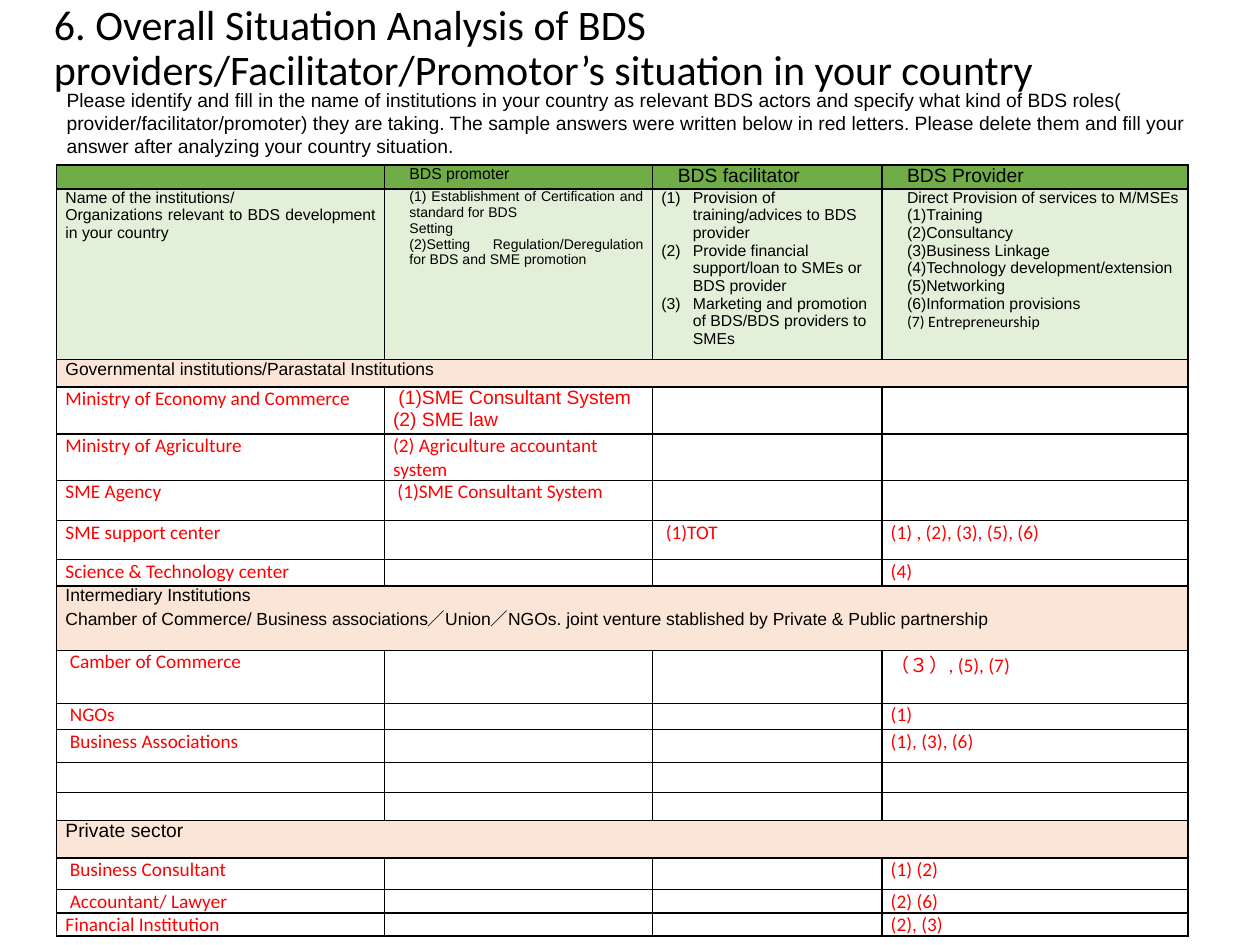
from dataclasses import dataclass

from lxml import etree
from pptx import Presentation
from pptx.dml.color import RGBColor
from pptx.enum.text import MSO_ANCHOR, PP_ALIGN
from pptx.oxml.ns import qn
from pptx.util import Inches, Pt

LEFT, JUST = PP_ALIGN.LEFT, PP_ALIGN.JUSTIFY
TOP, MIDDLE = MSO_ANCHOR.TOP, MSO_ANCHOR.MIDDLE
BLACK, RED = "000000", "FF0000"
GREEN, PALE, PEACH = "70AD47", "E2F0D9", "FBE5D6"
WIDTHS = (2.6, 2.13, 1.82, 2.43)


@dataclass
class Entry:
    text: str = ""
    size: float = 11
    font: str = "Calibri"
    color: str = RED
    align: int = LEFT
    indent: float = 0
    hang: float = 0
    number: bool = False


@dataclass
class Row:
    height: float
    cells: list
    fill: str = ""
    merged: bool = False


def paint(code: str) -> RGBColor:
    return RGBColor.from_string(code)


def head(text: str, size: float) -> Entry:
    return Entry(text, size, "Arial", BLACK, JUST, 0.13)


def answer(height: float, *texts: str) -> Row:
    return Row(height, [Entry(text) for text in texts])


def section(height: float, text: str, size: float) -> Row:
    return Row(height, [Entry(text, size, "Arial", BLACK, JUST)], PEACH, True)


def write(frame, entry: Entry) -> None:
    frame.word_wrap = True
    frame.text = entry.text
    for para in frame.paragraphs:
        para.alignment = entry.align
        props = para._p.get_or_add_pPr()
        if entry.indent:
            props.set("marL", str(Inches(entry.indent)))
            props.set("indent", str(Inches(-entry.hang)))
        if entry.number:
            etree.SubElement(props, qn("a:buAutoNum"), type="arabicParenBoth")
        for run in para.runs:
            run.font.size = Pt(entry.size)
            run.font.name = entry.font
            run.font.color.rgb = paint(entry.color)
        if not para.runs:
            para._p.get_or_add_endParaRPr().set("sz", "800")


def border(cell) -> None:
    props = cell._tc.get_or_add_tcPr()
    for side in ("lnL", "lnR", "lnT", "lnB"):
        line = etree.SubElement(props, qn(f"a:{side}"), w=str(Pt(1)))
        solid = etree.SubElement(line, qn("a:solidFill"))
        etree.SubElement(solid, qn("a:srgbClr"), val=BLACK)


def add_text(slide, box: tuple, entry: Entry, anchor: int):
    frame = slide.shapes.add_textbox(*map(Inches, box)).text_frame
    write(frame, entry)
    frame.vertical_anchor = anchor
    return frame


def add_grid(slide, rows: list):
    high = sum(row.height for row in rows)
    box = map(Inches, (0.45, 1.31, sum(WIDTHS), high))
    table = slide.shapes.add_table(len(rows), len(WIDTHS), *box).table
    table.first_row = table.horz_banding = False
    for col, width in zip(table.columns, WIDTHS):
        col.width = Inches(width)
    for r, row in enumerate(rows):
        table.rows[r].height = Inches(row.height)
        for c in range(len(WIDTHS)):
            cell = table.cell(r, c)
            cell.margin_left = cell.margin_right = Inches(0.07)
            cell.margin_top = cell.margin_bottom = 0
            border(cell)
            if row.fill:
                cell.fill.solid()
                cell.fill.fore_color.rgb = paint(row.fill)
            else:
                cell.fill.background()
            write(cell.text_frame, row.cells[c] if c < len(row.cells) else Entry())
        if row.merged:
            table.cell(r, 0).merge(table.cell(r, len(WIDTHS) - 1))
    return table


TITLE = "6. Overall Situation Analysis of BDS providers/Facilitator/Promotor’s situation in your country"
GUIDE = (
    "Please identify and fill in the name of institutions in your country as relevant BDS actors "
    "and specify what kind of BDS roles( provider/facilitator/promoter) they are taking. "
    "The sample answers were written below in red letters. "
    "Please delete them and fill your answer after analyzing your country situation."
)
NAMES = "Name of the institutions/\nOrganizations relevant to BDS development in your country"
PROMOTE = (
    "(1) Establishment of Certification and standard for BDS\nSetting\n"
    "(2)Setting Regulation/Deregulation for BDS and SME promotion"
)
ASSIST = (
    "Provision of training/advices to BDS provider\n"
    "Provide financial support/loan to SMEs or BDS provider\n"
    "Marketing and promotion of BDS/BDS providers to SMEs"
)
PROVIDE = (
    "Direct Provision of services to M/MSEs\n(1)Training\n(2)Consultancy\n"
    "(3)Business Linkage\n(4)Technology development/extension\n(5)Networking\n"
    "(6)Information provisions\n(7) Entrepreneurship"
)
MIDDLEMEN = (
    "Intermediary Institutions\nChamber of Commerce/ Business associations／Union／NGOs. "
    "joint venture stablished by Private & Public partnership"
)
ROWS = [
    Row(0.19, [Entry(), head("BDS promoter", 9), head("BDS facilitator ", 11),
               head("BDS Provider", 11)], GREEN),
    Row(1.35, [Entry(NAMES, 9, "Arial", BLACK, JUST), head(PROMOTE, 8),
               Entry(ASSIST, 9, "Arial", BLACK, LEFT, 0.25, 0.25, True),
               head(PROVIDE, 9)], PALE),
    section(0.22, "Governmental institutions/Parastatal Institutions", 10),
    Row(0.37, [Entry("Ministry of Economy and Commerce"),
               Entry(" (1)SME Consultant System\n(2) SME law", font="Arial")]),
    answer(0.37, "Ministry of Agriculture", "(2) Agriculture accountant system"),
    answer(0.32, "SME Agency", " (1)SME Consultant System"),
    answer(0.31, "SME support center", "", " (1)TOT", "(1) , (2), (3), (5), (6)"),
    answer(0.21, "Science & Technology center", "", "", "(4)"),
    section(0.51, MIDDLEMEN, 10),
    answer(0.42, " Camber of Commerce", "", "", "（３）, (5), (7)"),
    answer(0.21, " NGOs", "", "", "(1)"),
    answer(0.26, " Business Associations", "", "", "(1), (3), (6)"),
    answer(0.24),
    answer(0.22),
    section(0.3, "Private sector", 11),
    answer(0.25, " Business Consultant", "", "", "(1) (2)"),
    answer(0.18, " Accountant/ Lawyer", "", "", "(2) (6)"),
    answer(0.18, "Financial Institution", "", "", "(2), (3)"),
]


def main() -> None:
    deck = Presentation()
    deck.slide_width, deck.slide_height = Inches(10), Inches(7.5)
    slide = deck.slides.add_slide(deck.slide_layouts[6])
    title = add_text(slide, (0.33, 0.13, 8.64, 0.52), Entry(TITLE, 24, color=BLACK), MIDDLE)
    title.paragraphs[0].line_spacing = 0.9
    add_text(slide, (0.43, 0.65, 9.45, 0.84), Entry(GUIDE, 11, "Arial", BLACK), TOP)
    table = add_grid(slide, ROWS)
    table.cell(1, 3).text_frame.paragraphs[-1].runs[0].font.name = "Calibri"
    deck.save("out.pptx")


if __name__ == "__main__":
    main()
